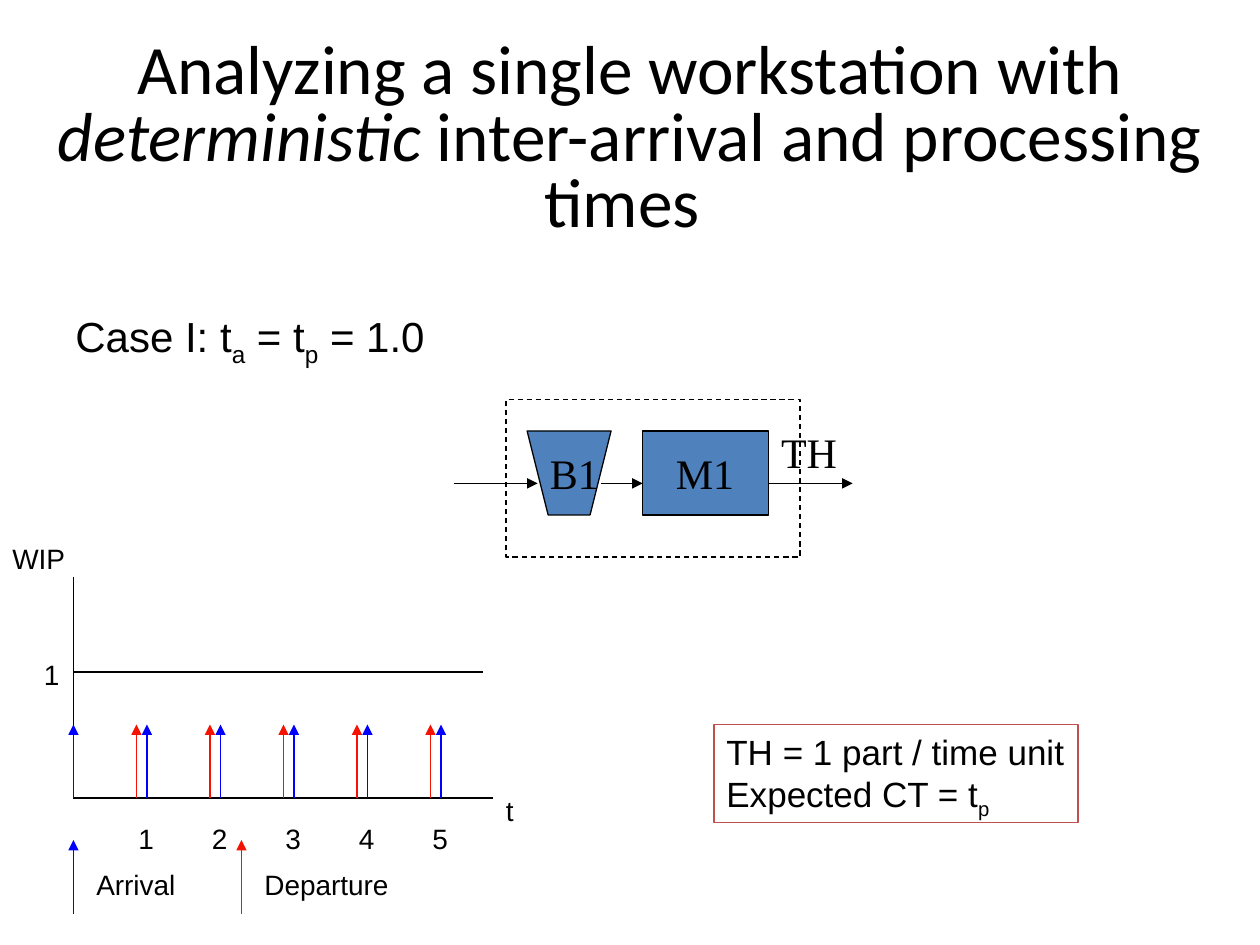
from pptx import Presentation
from pptx import util as u
from pptx.dml.color import RGBColor
from pptx.enum import dml, shapes, text
from pptx.oxml.ns import qn
from lxml import etree

INK = {"black": "000000", "blue": "0000FF", "red": "F41302",
       "fill": "4F81BD", "edge": "C0504D"}
UNIT = 1 / 12  # grid step in inches

# Content: a run is (text, style)
TITLE = [("Analyzing a single workstation with ", ""),
         ("deterministic", "italic"),
         (" inter-arrival and processing times ", "")]
CASE = [[("Case I: t", ""), ("a", "sub"), (" = t", ""), ("p", "sub"),
         (" = 1.0", "")]]
RESULT = [[("TH = 1 part / time unit", "")],
          [("Expected CT = t", ""), ("p", "sub")]]

# Workstation, in grid steps from its own corner
CORNER = (3.6, 3.17)
MACHINE = (18, 3, 12, 8)
FRAME = (5, 0, 28, 15)
BUFFER = [(7, 3), (9, 11), (13, 11), (15, 3)]
FLOWS = [(0, 8), (14, 18), (30, 38)]
FLOW_ROW = 8
NAMES = [("TH", 30, 2, 0.65), ("B1", 8, 4, 0.59), ("M1", 20, 4, 0.66)]

# Chart, in grid steps from the slide's corner
AXIS, BASE, TOP, LEVEL = 7, 76, 55, 64
STEP, RISE, COUNT = 7, 7, 5
LABELS = [("t", 47, 75, 0.26), ("WIP", 0, 51, 0.64), ("1", 3, 62, 0.32)]
LEGEND = [("Arrival", "blue", 7, 0.83), ("Departure", "red", 23, 1.19)]


def rgb(name):
    return RGBColor.from_string(INK[name])


def spot(col, row, start=(0, 0)):
    return [u.Inches(s + n * UNIT) for s, n in zip(start, (col, row))]


def style(shape, fill=None, line="black"):
    shape.shadow.inherit = False
    if fill:
        shape.fill.solid()
        shape.fill.fore_color.rgb = rgb(fill)
    else:
        shape.fill.background()
    shape.line.color.rgb = rgb(line)
    shape.line.width = u.Pt(0.75)


def write(para, runs, size, font):
    for words, kind in runs:
        run = para.add_run()
        run.text = words
        look = {"name": font, "size": u.Pt(size), "italic": kind == "italic"}
        for key, value in look.items():
            setattr(run.font, key, value)
        run.font.color.rgb = rgb("black")
        if kind == "sub":
            run._r.get_or_add_rPr().set("baseline", "-25000")


def label(home, place, size, lines, points, font="Arial"):
    box = home.add_textbox(*place, *map(u.Inches, size))
    frame = box.text_frame
    frame.word_wrap = False
    frame.auto_size = text.MSO_AUTO_SIZE.SHAPE_TO_FIT_TEXT
    for i, runs in enumerate(lines):
        para = frame.add_paragraph() if i else frame.paragraphs[0]
        write(para, runs, points, font)
    return box


def line(home, a, b, color="black", arrow=False):
    wire = home.add_connector(shapes.MSO_CONNECTOR.STRAIGHT, *a, *b)
    wire.line.color.rgb = rgb(color)
    wire.line.width = u.Pt(0.75)
    if arrow:
        etree.SubElement(wire.line._get_or_add_ln(), qn("a:tailEnd"),
                         type="triangle")
    etree.SubElement(wire._element.spPr, qn("a:effectLst"))


def event(home, col, base, color):
    line(home, spot(col, base), spot(col, base - RISE), color, True)


def block(home, col, row, wide, high, fill=None):
    shape = home.add_shape(shapes.MSO_SHAPE.RECTANGLE,
                           *spot(col, row, CORNER), *spot(wide, high))
    style(shape, fill)
    return shape


def head(slide):
    title = slide.shapes.title
    place = {"left": 0, "top": 0.33, "width": 10, "height": 1.58}
    for key, value in place.items():
        setattr(title, key, u.Inches(value))
    frame = title.text_frame
    frame.word_wrap = True
    frame.auto_size = text.MSO_AUTO_SIZE.NONE
    frame.vertical_anchor = text.MSO_ANCHOR.MIDDLE
    para = frame.paragraphs[0]
    para.alignment = text.PP_ALIGN.CENTER
    para.line_spacing = 0.8
    write(para, TITLE, 39.6, "Calibri")


def station(slide):
    home = slide.shapes.add_group_shape().shapes
    block(home, *MACHINE, "fill")
    first, *rest = [spot(*point, CORNER) for point in BUFFER]
    path = home.build_freeform(*first)
    path.add_line_segments(rest, close=True)
    style(path.convert_to_shape(), "fill")
    block(home, *FRAME).line.dash_style = dml.MSO_LINE.DASH
    for a, b in FLOWS:
        line(home, spot(a, FLOW_ROW, CORNER), spot(b, FLOW_ROW, CORNER),
             arrow=True)
    for words, col, row, wide in NAMES:
        label(home, spot(col, row, CORNER), (wide, 0.5), [[(words, "")]],
              24, "Times New Roman")


def chart(slide):
    home = slide.shapes
    # Axes and the WIP level
    for a, b in [((AXIS, BASE), (47, BASE)), ((AXIS, BASE), (AXIS, TOP)),
                 ((AXIS, LEVEL), (46, LEVEL))]:
        line(home, spot(*a), spot(*b))
    # Arrivals start at zero; departures come just before the next arrival
    for n in range(COUNT + 1):
        event(home, AXIS + n * STEP, BASE, "blue")
        if n:
            event(home, AXIS + n * STEP - 1, BASE, "red")
    # Axis labels and time ticks
    ticks = [(str(n), 5 + n * STEP, 77.64, 0.32) for n in range(1, COUNT + 1)]
    for words, col, row, wide in LABELS + ticks:
        label(home, spot(col, row), (wide, 0.37), [[(words, "")]], 16)
    # Legend
    for words, color, col, wide in LEGEND:
        event(home, col, 87, color)
        label(home, spot(col + 1, 82), (wide, 0.37), [[(words, "")]], 16)


def main():
    deck = Presentation()
    deck.slide_width, deck.slide_height = u.Inches(10), u.Inches(7.5)
    slide = deck.slides.add_slide(deck.slide_layouts[5])
    head(slide)
    station(slide)
    label(slide.shapes, spot(6, 29), (3.01, 0.5), CASE, 24)
    chart(slide)
    style(label(slide.shapes, spot(68, 69), (2.89, 0.78), RESULT, 20),
          line="edge")
    deck.save("out.pptx")


if __name__ == "__main__":
    main()
